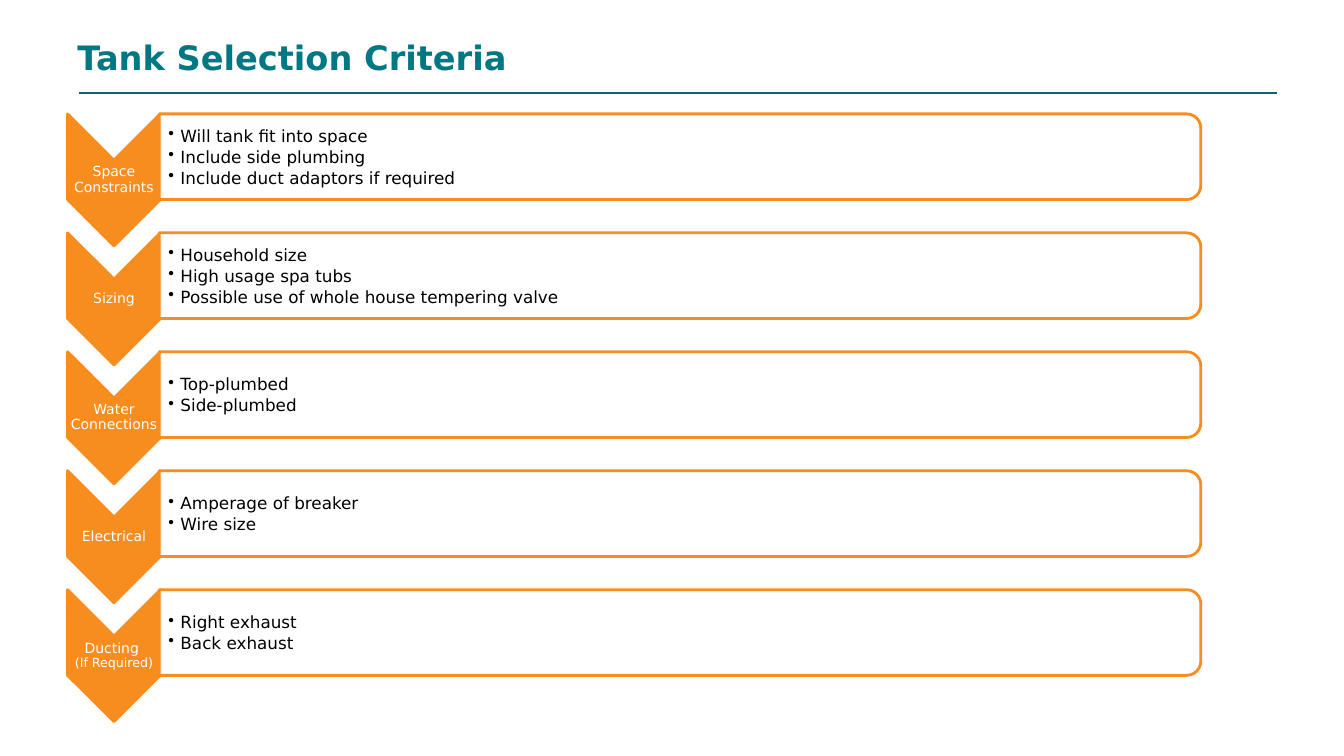
from dataclasses import dataclass
from lxml.etree import SubElement
from pptx import Presentation
from pptx.dml.color import RGBColor
from pptx.enum.shapes import MSO_CONNECTOR, MSO_SHAPE
from pptx.enum.text import MSO_ANCHOR, PP_ALIGN
from pptx.oxml.ns import qn
from pptx.shapes.autoshape import Shape
from pptx.slide import Slide
from pptx.text.text import TextFrame, _Paragraph
from pptx.util import Emu, Pt

SCALE = 9144
FONT = "DejaVu Sans"
TEAL, RULE, ORANGE = "007884", "0C6571", "F78D1E"
WHITE, BLACK = "FFFFFF", "000000"
TOP, PITCH = 113, 118


@dataclass(frozen=True)
class Box:
    left: int
    top: int
    width: int
    height: int


@dataclass(frozen=True)
class Topic:
    label: str
    points: tuple[str, ...]
    note: str = ""


TOPICS = (
    Topic("Space Constraints", ("Will tank fit into space", "Include side plumbing",
                                "Include duct adaptors if required")),
    Topic("Sizing", ("Household size", "High usage spa tubs",
                     "Possible use of whole house tempering valve")),
    Topic("Water Connections", ("Top-plumbed", "Side-plumbed")),
    Topic("Electrical", ("Amperage of breaker", "Wire size")),
    Topic("Ducting ", ("Right exhaust", "Back exhaust"), "(If Required)"),
)


def px(size: float) -> Emu:
    return Emu(int(size * SCALE))


def paint(code: str) -> RGBColor:
    return RGBColor.from_string(code)


def add_run(para: _Paragraph, text: str, size: int, color: str, bold: bool = False) -> None:
    run = para.add_run()
    run.text = text
    run.font.name = FONT
    run.font.size = Pt(size)
    run.font.bold = bold
    run.font.color.rgb = paint(color)


def add_text(slide: Slide, box: Box, left: int, edge: int) -> TextFrame:
    shape = slide.shapes.add_textbox(px(box.left), px(box.top), px(box.width), px(box.height))
    frame = shape.text_frame
    frame.word_wrap = True
    frame.vertical_anchor = MSO_ANCHOR.MIDDLE
    frame.margin_left = px(left)
    frame.margin_top = frame.margin_right = frame.margin_bottom = px(edge)
    return frame


def add_turned(slide: Slide, kind: MSO_SHAPE, box: Box, fill: str) -> Shape:
    shift = (box.width - box.height) / 2
    shape = slide.shapes.add_shape(kind, px(box.left + shift), px(box.top - shift),
                                   px(box.height), px(box.width))
    shape.rotation = 90
    shape.shadow.inherit = False
    shape.fill.solid()
    shape.fill.fore_color.rgb = paint(fill)
    shape.line.color.rgb = paint(ORANGE)
    shape.line.width = Pt(2)
    return shape


def add_bullet(para: _Paragraph) -> None:
    para.level = 1
    props = para._p.get_or_add_pPr()
    props.set("marL", str(px(12)))
    props.set("indent", str(px(-12)))
    SubElement(props, qn("a:buChar")).set("char", "•")


def add_topic(slide: Slide, topic: Topic, top: int) -> None:
    add_turned(slide, MSO_SHAPE.CHEVRON, Box(67, top, 92, 131), ORANGE)
    para = add_text(slide, Box(67, top + 46, 92, 39), 1, 1).paragraphs[0]
    para.alignment = PP_ALIGN.CENTER
    para.line_spacing = 0.9
    add_run(para, topic.label, 10, WHITE)
    if topic.note:
        para.add_line_break()
        add_run(para, topic.note, 9, WHITE)

    bar = add_turned(slide, MSO_SHAPE.ROUND_2_SAME_RECTANGLE, Box(158, top, 1033, 85), WHITE)
    color = bar._element.spPr.find(qn("a:solidFill"))[0]
    SubElement(color, qn("a:alpha")).set("val", "90000")
    frame = add_text(slide, Box(158, top + 5, 1029, 77), 9, 1)
    for index, point in enumerate(topic.points):
        para = frame.add_paragraph() if index else frame.paragraphs[0]
        add_bullet(para)
        para.line_spacing = 0.9
        para.space_after = Pt(2)
        add_run(para, point, 12, BLACK)


def main() -> None:
    deck = Presentation()
    deck.slide_width, deck.slide_height = px(1333), px(750)
    slide = deck.slides.add_slide(deck.slide_layouts[6])
    rule = slide.shapes.add_connector(MSO_CONNECTOR.STRAIGHT, px(78), px(92), px(1267), px(92))
    rule.line.color.rgb = paint(RULE)
    rule.line.width = Pt(1.5)
    SubElement(rule._element.spPr, qn("a:effectLst"))
    for index, topic in enumerate(TOPICS):
        add_topic(slide, topic, TOP + index * PITCH)
    title = add_text(slide, Box(67, 30, 1056, 53), 10, 5)
    add_run(title.paragraphs[0], "Tank Selection Criteria", 24, TEAL, True)
    deck.save("out.pptx")


if __name__ == "__main__":
    main()
